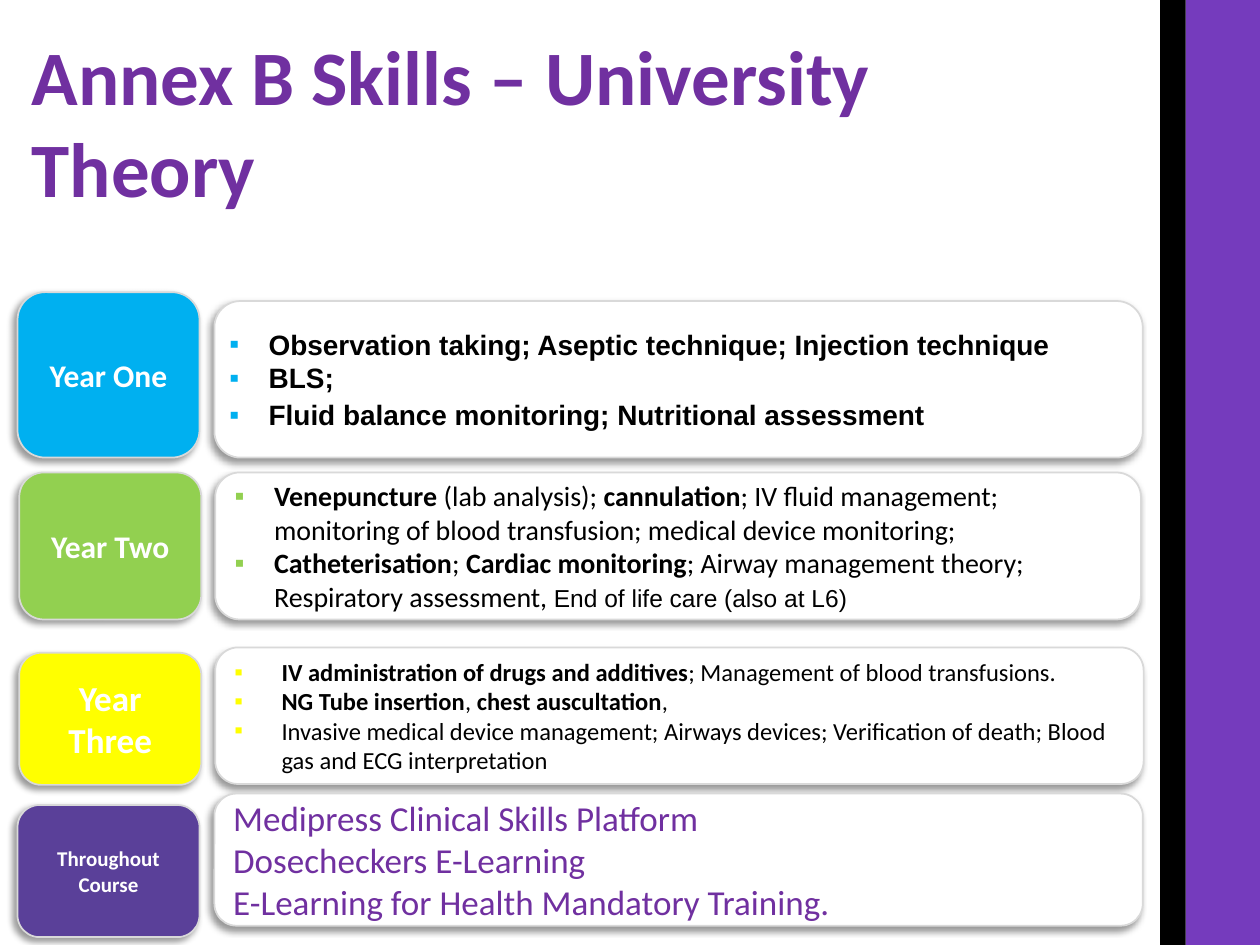
from dataclasses import dataclass

from lxml.etree import SubElement
from pptx import Presentation
from pptx.dml.color import RGBColor
from pptx.enum.shapes import MSO_SHAPE as Preset
from pptx.enum.text import MSO_ANCHOR as Anchor, PP_ALIGN as Align
from pptx.oxml.ns import qn
from pptx.util import Pt


@dataclass(frozen=True)
class Theme:
    white: str = "FFFFFF"
    black: str = "000000"
    heading: str = "7030A0"
    band: str = "753BBD"
    outline: str = "D9D9D9"
    year_one: str = "00B0F0"
    year_two: str = "92D050"
    year_three: str = "FFFF00"
    throughout: str = "5A4099"
    body_font: str = "Calibri"
    alt_font: str = "Arial"
    title_size: int = 44
    large: int = 20
    label: int = 18
    body: int = 16
    small: int = 14
    tiny: int = 12


THEME = Theme()


@dataclass(frozen=True)
class Box:
    left: float
    top: float
    width: float
    height: float

    def emu(self) -> tuple:
        return Pt(self.left), Pt(self.top), Pt(self.width), Pt(self.height)


@dataclass(frozen=True)
class Run:
    text: str
    bold: bool = False
    size: int | None = None
    font: str | None = None


@dataclass(frozen=True)
class Stage:
    name: str
    color: str
    name_size: int
    badge: Box
    panel: Box
    skills: tuple = ()
    skill_size: int = THEME.body
    skill_color: str = THEME.black
    indent: float = 0


STAGES = (
    Stage("Year Two", THEME.year_two, THEME.label,
          Box(11, 270, 104, 84), Box(123, 270, 529, 84),
          ((Run("Venepuncture", True), Run(" (lab analysis); "), Run("cannulation", True),
            Run("; IV fluid management; monitoring of blood transfusion; "
                "medical device monitoring;")),
           (Run("Catheterisation", True), Run("; "), Run("Cardiac monitoring", True),
            Run("; Airway management theory; Respiratory assessment, "),
            Run("End of life care (also at L6)", False, THEME.small, THEME.alt_font))),
          indent=22.5),
    Stage("Year Three", THEME.year_three, THEME.large,
          Box(11, 373, 104, 75.5), Box(123, 370, 530.5, 78),
          ((Run("IV administration of drugs and additives", True),
            Run("; Management of blood transfusions.")),
           (Run("NG Tube insertion", True), Run(", "),
            Run("chest auscultation", True), Run(",")),
           (Run("Invasive medical device management; Airways devices; "
                "Verification of death; Blood gas and ECG interpretation"),)),
          THEME.small, indent=27),
    Stage("Throughout Course", THEME.throughout, THEME.tiny,
          Box(10, 460, 104, 75.5), Box(122.5, 453.5, 530.5, 75.5),
          ((Run("Medipress Clinical Skills Platform"),),
           (Run("Dosecheckers E-Learning"),),
           (Run("E-Learning for Health Mandatory Training."),)),
          THEME.large, THEME.heading),
    Stage("Year One", THEME.year_one, THEME.label,
          Box(10, 167, 104, 94.5), Box(122.5, 172, 530.5, 89.5)),
)

YEAR_ONE_SKILLS = (
    (Run("Observation taking; Aseptic technique; Injection technique", True),),
    (Run("BLS;", True),),
    (Run("Fluid balance monitoring; Nutritional assessment", True),),
)


def rgb(color: str) -> RGBColor:
    return RGBColor.from_string(color)


def add_bullet(paragraph, color: str, indent: float) -> None:
    properties = paragraph._p.get_or_add_pPr()
    properties.set("marL", str(Pt(indent)))
    properties.set("indent", str(-Pt(indent)))
    bullet_color = SubElement(properties, qn("a:buClr"))
    SubElement(bullet_color, qn("a:srgbClr"), val=color)
    SubElement(properties, qn("a:buFont"), typeface=THEME.alt_font)
    SubElement(properties, qn("a:buChar"), char="▪")


def write(holder, paragraphs: tuple, *, size: int, color: str,
          font: str = THEME.body_font, align=Align.LEFT, anchor=Anchor.TOP,
          bullet: str = "", indent: float = 0, last_gap: float = 0) -> None:
    frame = holder.text_frame
    frame.word_wrap = True
    frame.vertical_anchor = anchor
    for index, runs in enumerate(paragraphs):
        paragraph = frame.add_paragraph() if index else frame.paragraphs[0]
        paragraph.alignment = align
        if indent:
            add_bullet(paragraph, bullet, indent)
        for part in runs:
            run = paragraph.add_run()
            run.text = part.text
            run.font.name = part.font or font
            run.font.size = Pt(part.size or size)
            run.font.bold = part.bold
            run.font.color.rgb = rgb(color)
    if last_gap:
        paragraph.space_before = Pt(last_gap)


def add_band(shapes, box: Box, color: str) -> None:
    band = shapes.add_shape(Preset.RECTANGLE, *box.emu())
    band.shadow.inherit = False
    band.fill.solid()
    band.fill.fore_color.rgb = rgb(color)
    band.line.fill.background()


def add_card(shapes, box: Box, color: str):
    card = shapes.add_shape(Preset.ROUNDED_RECTANGLE, *box.emu())
    card.fill.solid()
    card.fill.fore_color.rgb = rgb(color)
    card.line.color.rgb = rgb(THEME.outline)
    card.line.width = Pt(1)
    card.shadow.inherit = False
    effects = card._element.spPr.find(qn("a:effectLst"))
    shadow = SubElement(effects, qn("a:outerShdw"), blurRad=str(Pt(4)),
                        dist=str(Pt(3)), dir=str(135 * 60000), rotWithShape="0")
    shade = SubElement(shadow, qn("a:srgbClr"), val=THEME.black)
    SubElement(shade, qn("a:alpha"), val="40000")
    return card


def add_stage(slide, stage: Stage) -> None:
    shapes = slide.shapes.add_group_shape().shapes
    badge = add_card(shapes, stage.badge, stage.color)
    write(badge, ((Run(stage.name, True),),), size=stage.name_size,
          color=THEME.white, align=Align.CENTER, anchor=Anchor.MIDDLE)
    panel = add_card(shapes, stage.panel, THEME.white)
    if stage.skills:
        write(panel, stage.skills, size=stage.skill_size, color=stage.skill_color,
              anchor=Anchor.MIDDLE, bullet=stage.color, indent=stage.indent)


def main() -> None:
    deck = Presentation()
    deck.slide_width, deck.slide_height = Pt(720), Pt(540)
    slide = deck.slides.add_slide(deck.slide_layouts[6])
    add_band(slide.shapes, Box(677.5, 0, 42.5, 540), THEME.band)
    add_band(slide.shapes, Box(663, 0, 14.5, 540), THEME.black)
    title = slide.shapes.add_textbox(*Box(11, 12.5, 624, 102).emu())
    write(title, ((Run("Annex B Skills – University Theory", True),),),
          size=THEME.title_size, color=THEME.heading)
    for stage in STAGES:
        add_stage(slide, stage)
    year_one = slide.shapes.add_textbox(*Box(124, 183.5, 529, 68).emu())
    write(year_one, YEAR_ONE_SKILLS, size=THEME.body, color=THEME.black,
          font=THEME.alt_font, bullet=THEME.year_one, indent=22.5, last_gap=2)
    deck.save("out.pptx")


if __name__ == "__main__":
    main()
